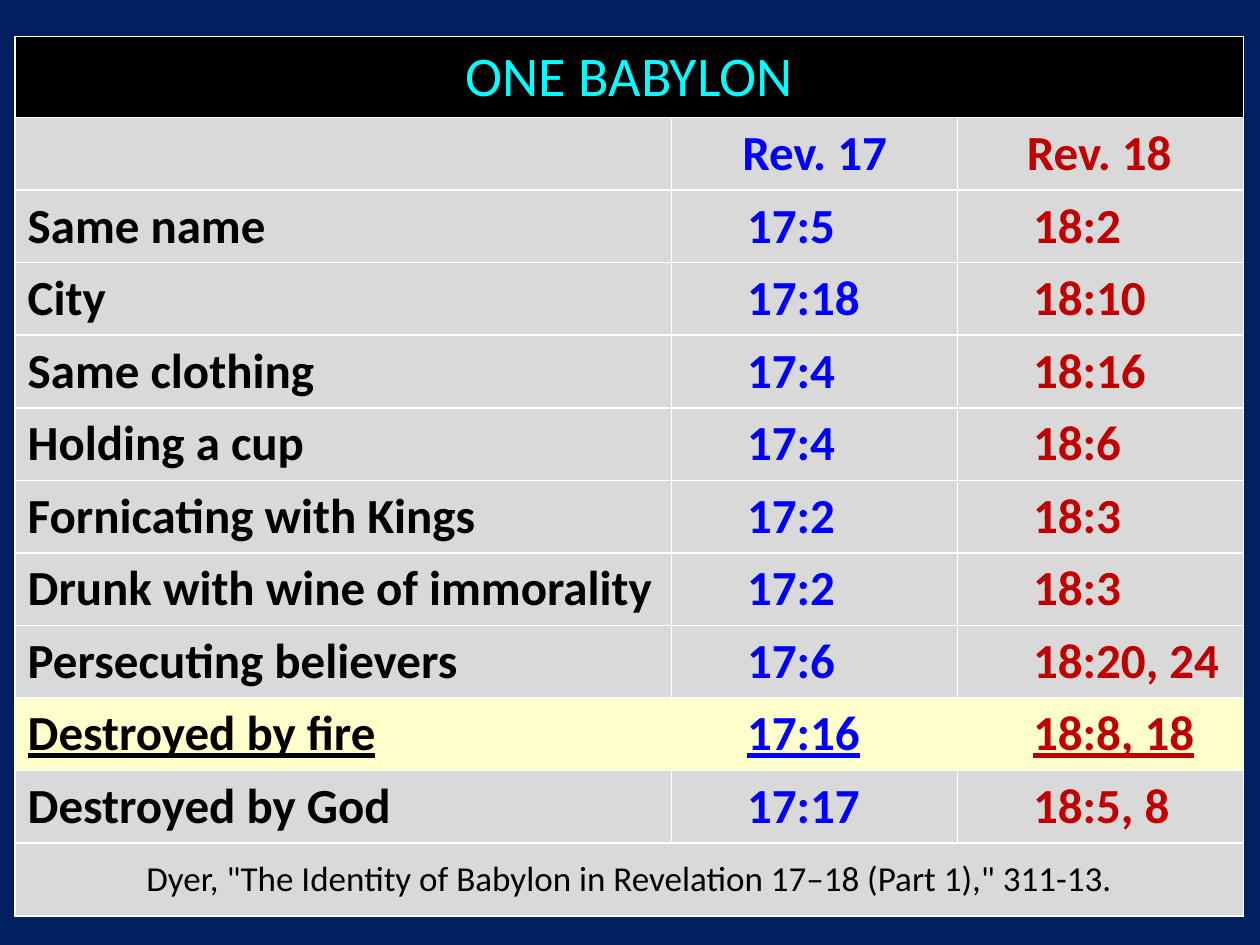
from dataclasses import dataclass

from lxml import etree
from pptx import Presentation
from pptx import util as u
from pptx.dml.color import RGBColor
from pptx.enum import text
from pptx.oxml.ns import qn
from pptx.table import _Cell


@dataclass(frozen=True)
class Theme:
    font: str = "Calibri"
    page: str = "002060"
    title_fill: str = "000000"
    title_ink: str = "00FFFF"
    row_fill: str = "D9D9D9"
    accent_fill: str = "FFFFCC"
    ink: str = "000000"
    first: str = "0000FF"
    second: str = "C00000"
    border: str = "FFFFFF"
    border_width: float = 1
    title_size: float = 32
    body_size: float = 28
    source_size: float = 20


THEME = Theme()
CENTER = text.PP_ALIGN.CENTER
LEFT = text.PP_ALIGN.LEFT


@dataclass(frozen=True)
class Entry:
    """Wording and format of one table cell."""
    words: str
    color: str = THEME.ink
    size: float = THEME.body_size
    bold: bool = True
    underline: bool = False
    align: text.PP_ALIGN = LEFT
    indent: float = 0
    level: int = 0


@dataclass(frozen=True)
class Parallel:
    """A trait of Babylon with its verse in each chapter."""
    trait: str
    rev17: str
    rev18: str
    accent: bool = False

    def entries(self) -> list[Entry]:
        verses = [
            Entry(verse, color, underline=self.accent, indent=0.5, level=1)
            for verse, color in ((self.rev17, THEME.first), (self.rev18, THEME.second))
        ]
        return [Entry(self.trait, underline=self.accent), *verses]


PARALLELS = [
    Parallel("Same name", "17:5", "18:2"),
    Parallel("City", "17:18", "18:10"),
    Parallel("Same clothing", "17:4", "18:16"),
    Parallel("Holding a cup", "17:4", "18:6"),
    Parallel("Fornicating with Kings", "17:2", "18:3"),
    Parallel("Drunk with wine of immorality", "17:2", "18:3"),
    Parallel("Persecuting believers", "17:6", "18:20, 24"),
    Parallel("Destroyed by fire", "17:16", "18:8, 18", accent=True),
    Parallel("Destroyed by God", "17:17", "18:5, 8"),
]
TITLE = Entry("ONE BABYLON", THEME.title_ink, THEME.title_size, bold=False, align=CENTER)
HEADINGS = [
    Entry(""),
    Entry("Rev. 17", THEME.first, align=CENTER),
    Entry("Rev. 18", THEME.second, indent=0.45),
]
SOURCE = Entry(
    'Dyer, "The Identity of Babylon in Revelation 17–18 (Part 1)," 311-13.',
    size=THEME.source_size, bold=False, align=CENTER,
)
COLUMN_WIDTHS = [5.21, 2.27, 2.27]
TITLE_HEIGHT, BODY_HEIGHT, SOURCE_HEIGHT = 0.64, 0.57, 0.58


def style_cell(cell: _Cell, fill: str) -> None:
    """Draw the four borders, then the fill."""
    properties = cell._tc.get_or_add_tcPr()
    for side in ("a:lnL", "a:lnR", "a:lnT", "a:lnB"):
        line = etree.SubElement(properties, qn(side), w=str(u.Pt(THEME.border_width)))
        solid = etree.SubElement(line, qn("a:solidFill"))
        etree.SubElement(solid, qn("a:srgbClr"), val=THEME.border)
    cell.fill.solid()
    cell.fill.fore_color.rgb = RGBColor.from_string(fill)
    cell.vertical_anchor = text.MSO_ANCHOR.MIDDLE


def write_cell(cell: _Cell, entry: Entry) -> None:
    para = cell.text_frame.paragraphs[0]
    para.alignment = entry.align
    para.level = entry.level
    if entry.indent:
        properties = para._p.get_or_add_pPr()
        properties.set("marL", str(u.Inches(entry.indent)))
        properties.set("indent", "0")
    if not entry.words:
        return
    span = para.add_run()
    span.text = entry.words
    formats = {
        "name": THEME.font,
        "size": u.Pt(entry.size),
        "bold": entry.bold,
        "underline": entry.underline,
    }
    for name, value in formats.items():
        setattr(span.font, name, value)
    span.font.color.rgb = RGBColor.from_string(entry.color)


def main() -> None:
    deck = Presentation()
    deck.slide_width, deck.slide_height = u.Inches(10), u.Inches(7.5)
    page = deck.slides.add_slide(deck.slide_layouts[6])
    page.background.fill.solid()
    page.background.fill.fore_color.rgb = RGBColor.from_string(THEME.page)

    # Rows from the title down to the source
    rows = [[TITLE], HEADINGS, *(parallel.entries() for parallel in PARALLELS), [SOURCE]]
    fills = [
        THEME.title_fill,
        THEME.row_fill,
        *(THEME.accent_fill if parallel.accent else THEME.row_fill for parallel in PARALLELS),
        THEME.row_fill,
    ]
    heights = [TITLE_HEIGHT, *[BODY_HEIGHT] * (len(rows) - 2), SOURCE_HEIGHT]

    # Table grid
    table = page.shapes.add_table(
        len(rows), len(COLUMN_WIDTHS), u.Inches(0.12), u.Inches(0.29),
        u.Inches(sum(COLUMN_WIDTHS)), u.Inches(sum(heights)),
    ).table
    for column, width in zip(table.columns, COLUMN_WIDTHS):
        column.width = u.Inches(width)

    # Cells; a row with one entry spans all columns
    for index, (entries, fill, height) in enumerate(zip(rows, fills, heights)):
        table.rows[index].height = u.Inches(height)
        cells = list(table.rows[index].cells)
        for cell in cells:
            style_cell(cell, fill)
        if len(entries) == 1:
            cells[0].merge(cells[-1])
        for cell, entry in zip(cells, entries):
            write_cell(cell, entry)

    deck.save("out.pptx")


if __name__ == "__main__":
    main()
